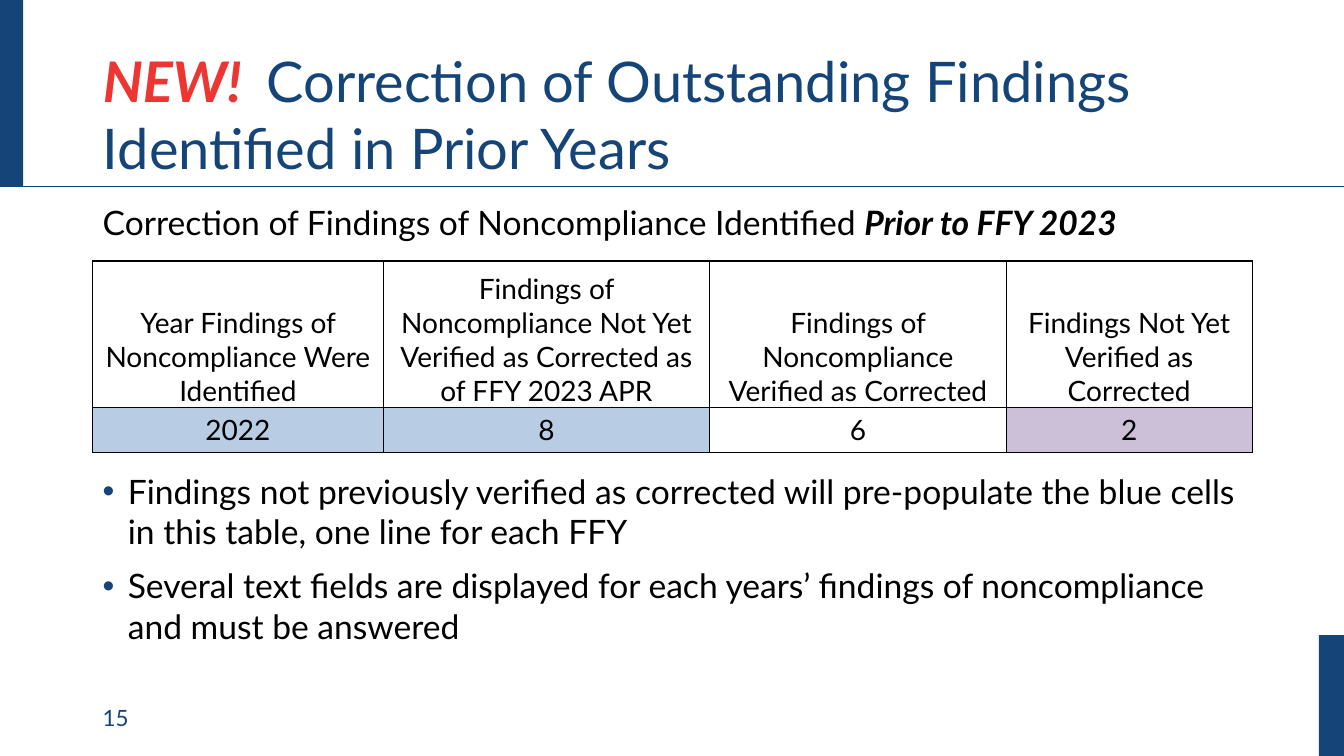
from dataclasses import dataclass

from lxml.etree import SubElement
from pptx import Presentation
from pptx.dml.color import RGBColor
from pptx.enum.shapes import MSO_CONNECTOR, MSO_SHAPE
from pptx.enum.text import MSO_ANCHOR, MSO_AUTO_SIZE, PP_ALIGN
from pptx.oxml.ns import qn
from pptx.util import Inches, Pt

FONT = "Lato"
NAVY, RED, BLACK = "154578", "ED3532", "000000"
PREFILLED, CALCULATED = "B8CCE4", "CCC0D9"
LEFT, WIDTH = 0.92, 11.5


@dataclass(frozen=True)
class Box:
    left: float
    top: float
    width: float
    height: float

    def emu(self):
        return [Inches(v) for v in (self.left, self.top, self.width, self.height)]


@dataclass(frozen=True)
class Run:
    text: str
    size: float
    color: str = BLACK
    strong: bool = False  # bold italic


@dataclass(frozen=True)
class Column:
    width: float
    heading: str
    value: str
    value_fill: str | None = None


BARS = [Box(-0.02, 0, 0.25, 1.85), Box(13.08, 6.3, 0.25, 1.2)]
COLUMNS = [
    Column(2.88, "Year Findings of Noncompliance Were Identified", "2022", PREFILLED),
    Column(3.24, "Findings of Noncompliance Not Yet Verified as Corrected as of FFY 2023 APR",
           "8", PREFILLED),
    Column(2.94, "Findings of Noncompliance Verified as Corrected", "6"),
    Column(2.44, "Findings Not Yet Verified as Corrected", "2", CALCULATED),
]
ROW_HEIGHTS = [1.45, 0.45]
BULLETS = [
    "Findings not previously verified as corrected will pre-populate the blue cells "
    "in this table, one line for each FFY",
    "Several text fields are displayed for each years’ findings of noncompliance "
    "and must be answered",
]


def rgb(color: str) -> RGBColor:
    return RGBColor.from_string(color)


def add_runs(paragraph, *runs: Run) -> None:
    for item in runs:
        run = paragraph.add_run()
        run.text = item.text
        font = run.font
        font.name, font.size = FONT, Pt(item.size)
        font.bold = font.italic = item.strong
        font.color.rgb = rgb(item.color)


def prepare_frame(frame, anchor=MSO_ANCHOR.TOP):
    frame.word_wrap = True
    frame.auto_size = MSO_AUTO_SIZE.NONE
    frame.vertical_anchor = anchor
    return frame


def add_text_frame(slide, box: Box, anchor=MSO_ANCHOR.TOP):
    return prepare_frame(slide.shapes.add_textbox(*box.emu()).text_frame, anchor)


def set_bullet(paragraph) -> None:
    properties = paragraph._p.get_or_add_pPr()
    properties.set("marL", str(Inches(0.25)))
    properties.set("indent", str(Inches(-0.25)))
    bullet_color = SubElement(properties, qn("a:buClr"))
    SubElement(bullet_color, qn("a:srgbClr"), val=NAVY)
    SubElement(properties, qn("a:buFont"), typeface="Arial")
    SubElement(properties, qn("a:buChar"), char="•")


def set_borders(cell) -> None:
    properties = cell._tc.get_or_add_tcPr()
    for side in ("L", "R", "T", "B"):
        border = SubElement(properties, qn(f"a:ln{side}"), w=str(Pt(1)))
        solid = SubElement(border, qn("a:solidFill"))
        SubElement(solid, qn("a:srgbClr"), val=BLACK)


def fill_cell(cell, text: str, anchor, fill: str | None) -> None:
    set_borders(cell)
    if fill:
        cell.fill.solid()
        cell.fill.fore_color.rgb = rgb(fill)
    else:
        cell.fill.background()
    cell.margin_left = cell.margin_right = Inches(0.07)
    cell.margin_top = cell.margin_bottom = 0
    cell.vertical_anchor = anchor
    paragraph = cell.text_frame.paragraphs[0]
    paragraph.alignment = PP_ALIGN.CENTER
    add_runs(paragraph, Run(text, 20))


def add_frame_decoration(slide) -> None:
    """Draw the navy edge bars and the rule under the title."""
    for box in BARS:
        bar = slide.shapes.add_shape(MSO_SHAPE.RECTANGLE, *box.emu())
        bar.shadow.inherit = False
        bar.fill.solid()
        bar.fill.fore_color.rgb = rgb(NAVY)
        bar.line.fill.background()
    rule = slide.shapes.add_connector(
        MSO_CONNECTOR.STRAIGHT, Inches(-0.02), Inches(1.85), Inches(13.33), Inches(1.85))
    rule.line.color.rgb = rgb(NAVY)
    rule.line.width = Pt(0.5)
    SubElement(rule._element.spPr, qn("a:effectLst"))


def set_title(slide) -> None:
    title = slide.shapes.title
    title.left, title.top, title.width, title.height = Box(LEFT, 0.4, WIDTH, 1.45).emu()
    paragraph = prepare_frame(title.text_frame, MSO_ANCHOR.MIDDLE).paragraphs[0]
    paragraph.alignment = PP_ALIGN.LEFT
    add_runs(paragraph, Run("NEW!  ", 40, RED, strong=True),
             Run("Correction of Outstanding Findings Identified in Prior Years", 40, NAVY))


def add_findings_table(slide) -> None:
    box = Box(LEFT, 2.59, WIDTH, sum(ROW_HEIGHTS))
    table = slide.shapes.add_table(len(ROW_HEIGHTS), len(COLUMNS), *box.emu()).table
    table.first_row = table.horz_banding = False
    for row, height in zip(table.rows, ROW_HEIGHTS):
        row.height = Inches(height)
    for index, column in enumerate(COLUMNS):
        table.columns[index].width = Inches(column.width)
        fill_cell(table.cell(0, index), column.heading, MSO_ANCHOR.BOTTOM, None)
        fill_cell(table.cell(1, index), column.value, MSO_ANCHOR.MIDDLE, column.value_fill)


def add_bullets(slide) -> None:
    frame = add_text_frame(slide, Box(LEFT, 4.62, WIDTH, 1.89))
    for index, text in enumerate(BULLETS):
        paragraph = frame.add_paragraph() if index else frame.paragraphs[0]
        if index:
            paragraph.space_before = Pt(10)
        set_bullet(paragraph)
        add_runs(paragraph, Run(text, 24))


def main() -> None:
    deck = Presentation()
    deck.slide_width, deck.slide_height = Inches(13.33), Inches(7.5)
    slide = deck.slides.add_slide(deck.slide_layouts[5])
    add_frame_decoration(slide)
    set_title(slide)

    intro = add_text_frame(slide, Box(LEFT, 2, WIDTH, 0.5)).paragraphs[0]
    intro.line_spacing = 0.9
    add_runs(intro, Run("Correction of Findings of Noncompliance Identified ", 24),
             Run("Prior to FFY 2023", 24, strong=True))

    add_findings_table(slide)
    add_bullets(slide)

    page_number = add_text_frame(slide, Box(LEFT, 6.92, 3, 0.4), MSO_ANCHOR.MIDDLE)
    add_runs(page_number.paragraphs[0], Run("15", 16, NAVY))
    deck.save("out.pptx")


if __name__ == "__main__":
    main()
